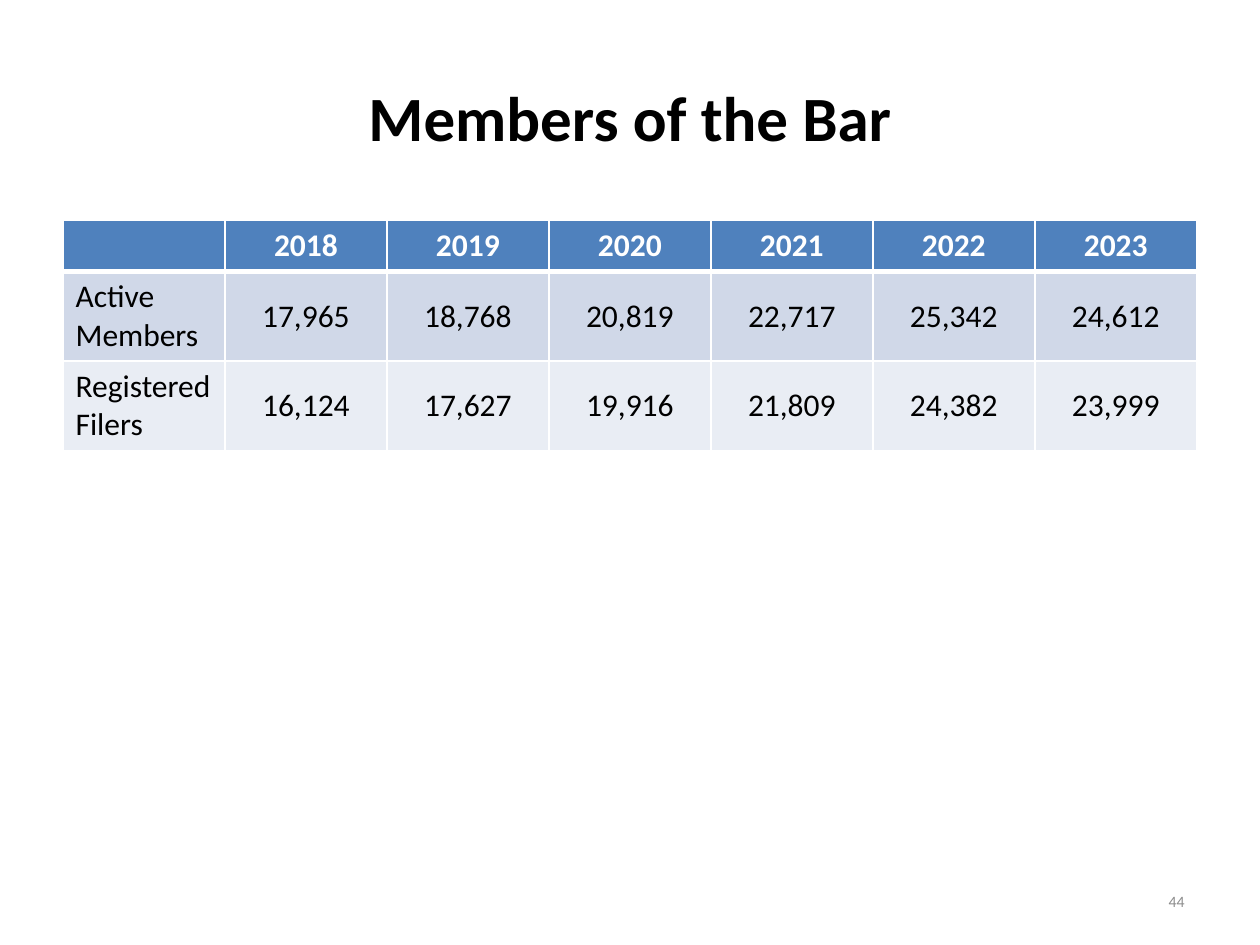
from dataclasses import dataclass

import pptx
import pptx.dml.color
import pptx.enum.text
import pptx.oxml
import pptx.oxml.ns
import pptx.util

Pt = pptx.util.Pt
RGB = pptx.dml.color.RGBColor
Align = pptx.enum.text.PP_ALIGN
Anchor = pptx.enum.text.MSO_ANCHOR

BLACK = RGB(0, 0, 0)
WHITE = RGB(0xFF, 0xFF, 0xFF)
GRAY = RGB(0x8C, 0x8C, 0x8C)
BLUE = RGB(0x4F, 0x81, 0xBD)
PALE = RGB(0xD0, 0xD8, 0xE8)
LIGHT = RGB(0xE9, 0xED, 0xF4)
FONT = "Calibri"


@dataclass(frozen=True)
class Style:
    size: float
    color: RGB
    bold: bool = False
    align: Align = Align.CENTER


@dataclass(frozen=True)
class Band:
    texts: tuple[str, ...]
    fill: RGB
    style: Style
    base: float = 1


HEAD = Style(18, WHITE, True)
BODY = Style(18, BLACK)
LABEL = Style(18, BLACK, align=Align.LEFT)
BANDS = (
    Band(("", "2018", "2019", "2020", "2021", "2022", "2023"), BLUE, HEAD, 3),
    Band(("Active Members", "17,965", "18,768", "20,819", "22,717", "25,342", "24,612"), PALE, BODY),
    Band(("Registered Filers", "16,124", "17,627", "19,916", "21,809", "24,382", "23,999"), LIGHT, BODY),
)


def write(frame, text: str, style: Style) -> None:
    para = frame.paragraphs[0]
    para.alignment = style.align
    run = para.add_run()
    run.text = text
    run.font.name = FONT
    run.font.size = Pt(style.size)
    run.font.bold = style.bold
    run.font.color.rgb = style.color


def place(shape, left: float, top: float, width: float, height: float) -> None:
    shape.left, shape.top = Pt(left), Pt(top)
    shape.width, shape.height = Pt(width), Pt(height)


def edge(cell, top: float, base: float) -> None:
    props = cell._tc.get_or_add_tcPr()
    sides = (("lnL", 1), ("lnR", 1), ("lnT", top), ("lnB", base))
    for spot, (side, width) in enumerate(sides):
        line = pptx.oxml.parse_xml(
            f'<a:{side} {pptx.oxml.ns.nsdecls("a")} w="{Pt(width)}">'
            f'<a:solidFill><a:srgbClr val="{WHITE}"/></a:solidFill></a:{side}>'
        )
        props.insert(spot, line)


def draw(slide, bands: tuple[Band, ...]) -> None:
    count = len(bands[0].texts)
    frame = slide.shapes.add_table(len(bands), count, Pt(36), Pt(126), Pt(648), Pt(108.72))
    table = frame.table
    for col in table.columns:
        col.width = Pt(648 / count)
    top = 1
    for row, band in enumerate(bands):
        table.rows[row].height = Pt(29.2)
        for col, text in enumerate(band.texts):
            cell = table.cell(row, col)
            cell.fill.solid()
            cell.fill.fore_color.rgb = band.fill
            edge(cell, top, band.base)
            label = col == 0 and row > 0
            cell.vertical_anchor = Anchor.TOP if label else Anchor.MIDDLE
            if text:
                write(cell.text_frame, text, LABEL if label else band.style)
        top = band.base
    frame.height = Pt(108.72)


def main() -> None:
    deck = pptx.Presentation()
    deck.slide_width, deck.slide_height = Pt(720), Pt(540)
    slide = deck.slides.add_slide(deck.slide_layouts[5])
    title = slide.shapes.title
    place(title, 36, 21.6, 648, 90)
    title.text_frame.vertical_anchor = Anchor.MIDDLE
    write(title.text_frame, "Members of the Bar", Style(36, BLACK, True))
    draw(slide, BANDS)
    page = slide.shapes.add_textbox(Pt(516), Pt(500.5), Pt(168), Pt(28.75))
    page.text_frame.word_wrap = True
    page.text_frame.vertical_anchor = Anchor.MIDDLE
    write(page.text_frame, "44", Style(9, GRAY, align=Align.RIGHT))
    deck.save("out.pptx")


if __name__ == "__main__":
    main()
